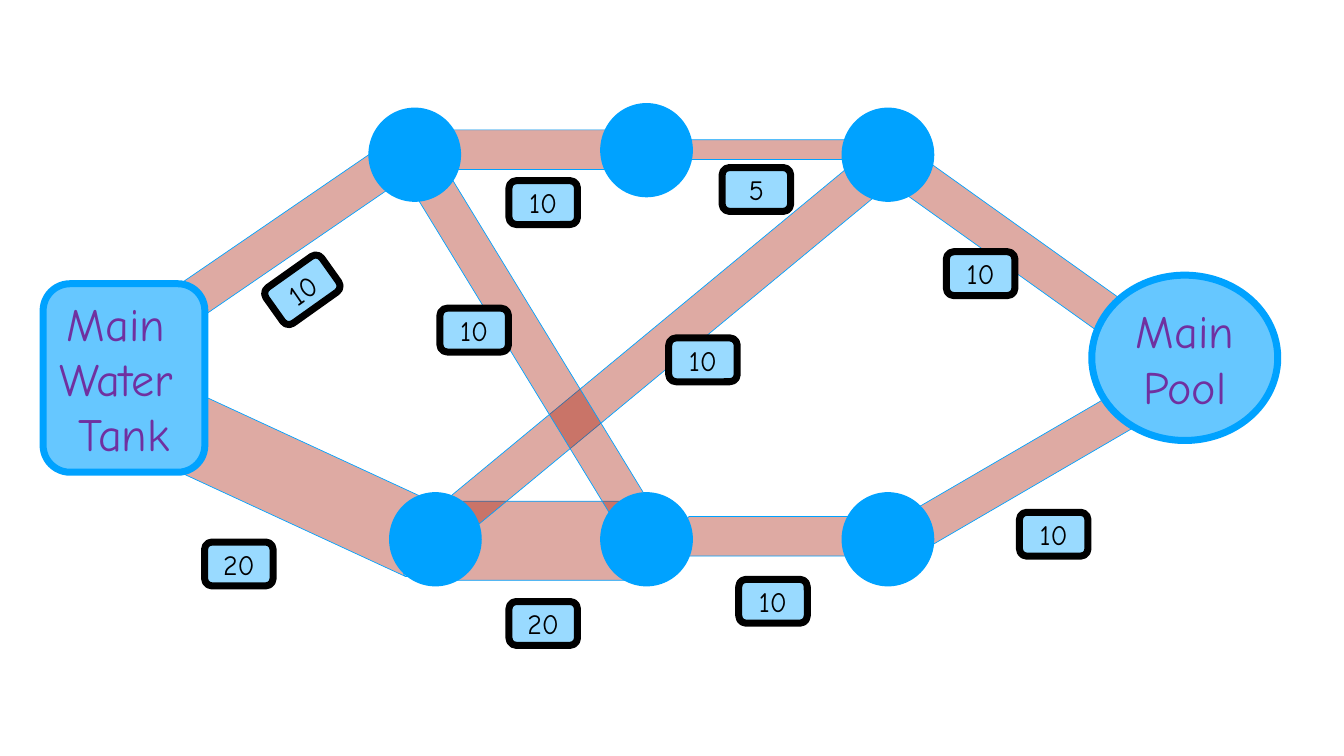
from lxml import etree
from pptx import Presentation, util as u
from pptx.dml.color import RGBColor
from pptx.enum import shapes, text
from pptx.oxml.ns import qn

# The grid has one-inch cells; every position is the centre of a part
COLS, ROWS = 26.67, 15
FONT = "Comic Neue"
COLORS = {"pipe": "A61500", "blue": "00A2FF", "end": "66C7FF",
          "label": "99DAFF", "purple": "7030A0", "black": "000000"}
BORE = 0.0785  # pipe width per unit of capacity
NODE, LABEL = (1.84, 1.87), (1.36, 0.87)
SHAPE = shapes.MSO_SHAPE

# capacity, pipe centre, pipe length, pipe angle, label centre, label angle
PIPES = [
    (20, (6.09, 9.67), 5.43, 114.8, (4.74, 11.19), 0),
    (20, (10.78, 10.73), 3.77, 90, (10.78, 12.37), 0),
    (10, (15.28, 10.64), 3.39, 90, (15.34, 11.93), 0),
    (10, (20.17, 4.94), 5.68, 125.5, (19.46, 5.43), 0),
    (10, (13.01, 6.99), 11.03, 50.4, (13.95, 7.14), 0),
    (10, (20.35, 9.28), 6.11, 59.8, (20.91, 10.6), 0),
    (10, (10.54, 6.88), 7.71, 148.6, (9.41, 6.55), 0),
    (5, (15.12, 2.97), 3.71, 90, (15.01, 3.76), 0),
    (10, (10.62, 2.97), 4.1, 90, (10.78, 4.02), 0),
    (10, (5.69, 4.66), 5.2, 55.6, (6, 5.75), 324.6),
]
NODES = [(8.23, 3.07), (8.64, 10.7), (12.83, 2.98),
         (17.62, 3.07), (12.83, 10.7), (17.62, 10.7)]


def rgb(name):
    return RGBColor.from_string(COLORS[name])


def add_part(s, box, kind, centre, size, fill, line=None, width=1, angle=0, alpha=None):
    """Place a shape by its centre on the grid of the given box."""
    left, top, box_w, box_h = box
    cell_w, cell_h = box_w / COLS, box_h / ROWS
    (x, y), (w, h) = centre, size
    sp = s.shapes.add_shape(kind, u.Emu(int(left + (x - w / 2) * cell_w)),
                            u.Emu(int(top + (y - h / 2) * cell_h)),
                            u.Emu(int(w * cell_w)), u.Emu(int(h * cell_h)))
    sp.shadow.inherit = False
    sp.rotation = angle
    sp.fill.solid()
    sp.fill.fore_color.rgb = rgb(fill)
    if alpha:
        color = sp.fill._xPr.find(".//" + qn("a:srgbClr"))
        etree.SubElement(color, qn("a:alpha")).set("val", str(alpha * 1000))
    if line:
        sp.line.color.rgb = rgb(line)
        sp.line.width = u.Pt(width)
    else:
        sp.line.fill.background()
    return sp


def write(sp, lines, size, color):
    """Write centred paragraphs in a shape."""
    tf = sp.text_frame
    tf.word_wrap = True
    tf.auto_size = text.MSO_AUTO_SIZE.SHAPE_TO_FIT_TEXT
    tf.vertical_anchor = text.MSO_ANCHOR.MIDDLE
    tf.margin_left = tf.margin_right = tf.margin_top = tf.margin_bottom = u.Inches(0.06)
    for i, line in enumerate(lines):
        p = tf.add_paragraph() if i else tf.paragraphs[0]
        p.alignment = text.PP_ALIGN.CENTER
        r = p.add_run()
        r.text = line
        r.font.name, r.font.size = FONT, u.Pt(size)
        r.font.color.rgb = rgb(color)


def add_endpoint(s, box, kind, centre, size, lines):
    sp = add_part(s, box, kind, centre, size, "end", "blue", 10)
    write(sp, lines, 66, "purple")


def add_network(s, box):
    # Pipes, as wide as their capacity
    for capacity, centre, length, angle, _, _ in PIPES:
        add_part(s, box, SHAPE.CAN, centre, (capacity * BORE, length),
                 "pipe", "blue", angle=angle, alpha=36)
    # Tank, junctions and pool
    add_endpoint(s, box, SHAPE.ROUNDED_RECTANGLE, (2.46, 7.5), (3.21, 3.74),
                 ["Main ", "Water ", "Tank"])
    for centre in NODES:
        add_part(s, box, SHAPE.OVAL, centre, NODE, "blue")
    add_endpoint(s, box, SHAPE.OVAL, (23.51, 7.1), (3.69, 3.28), ["Main Pool"])
    # Capacity labels
    for capacity, _, _, _, centre, angle in PIPES:
        sp = add_part(s, box, SHAPE.ROUNDED_RECTANGLE, centre, LABEL,
                      "label", "black", 10, angle)
        write(sp, [str(capacity)], 40, "black")


def main():
    prs = Presentation()
    prs.slide_width, prs.slide_height = u.Inches(COLS), u.Inches(ROWS)
    s = prs.slides.add_slide(prs.slide_layouts[6])
    add_network(s, (0, 0, prs.slide_width, prs.slide_height))
    prs.save("out.pptx")


if __name__ == "__main__":
    main()
